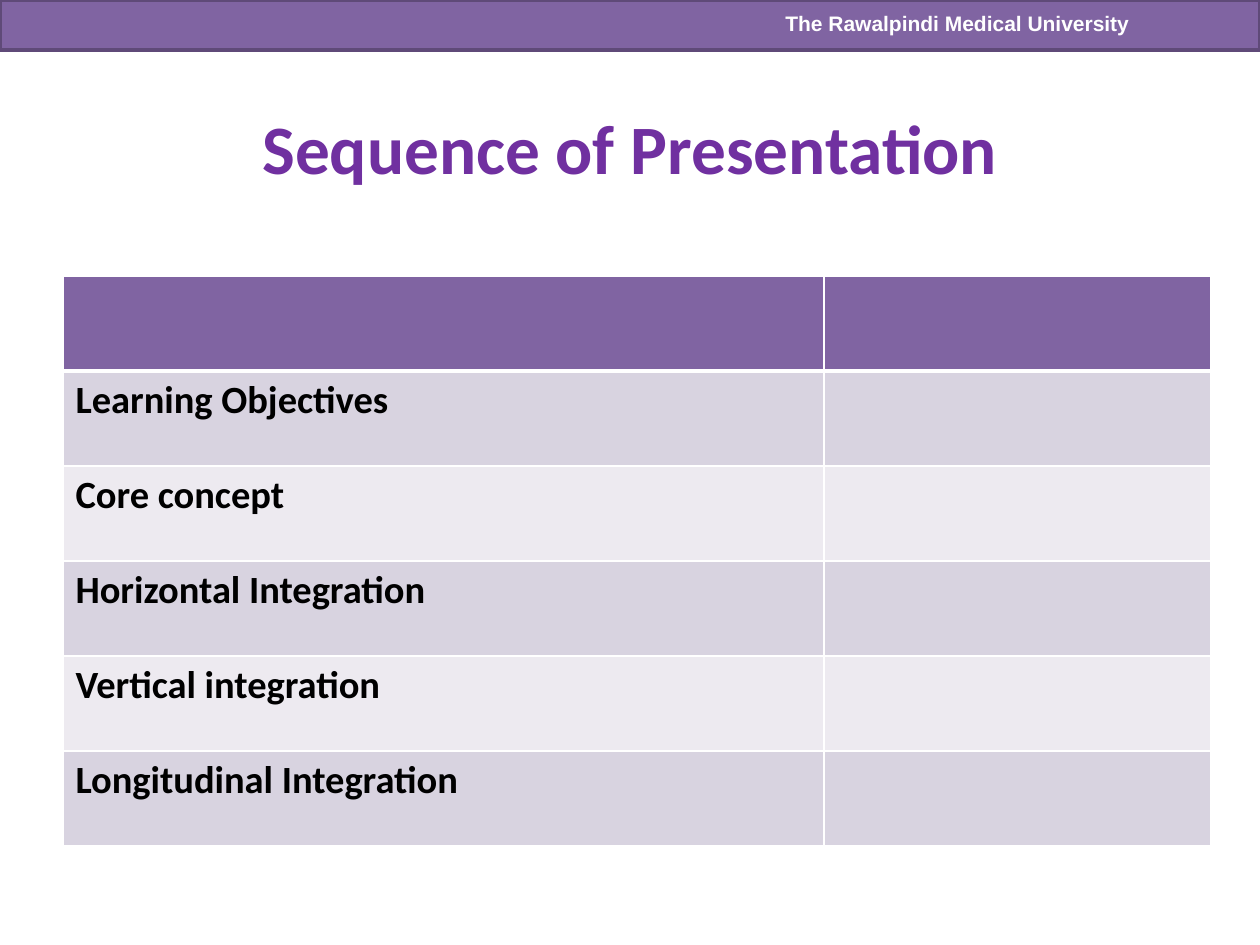
from lxml.etree import SubElement
from pptx import Presentation
from pptx.dml.color import RGBColor
from pptx.enum.shapes import MSO_SHAPE
from pptx.enum.text import MSO_ANCHOR, MSO_AUTO_SIZE, PP_ALIGN
from pptx.oxml.ns import qn
from pptx.util import Emu, Pt

COLORS = {
    "purple": "8064A2",
    "outline": "5F4A78",
    "title": "7030A0",
    "dark_band": "D8D3E0",
    "light_band": "EDEAF0",
    "white": "FFFFFF",
    "black": "000000",
}
FORMATS = {
    "header": {"name": "Arial", "size": Pt(12), "bold": True, "color": "white"},
    "title": {"name": "Calibri", "size": Pt(39.6), "bold": True, "color": "title"},
    "topic": {"name": "Calibri", "size": Pt(22), "bold": True, "color": "black"},
}
TOPICS = [
    "Learning Objectives",
    "Core concept",
    "Horizontal Integration",
    "Vertical integration",
    "Longitudinal Integration",
]
COLUMN_WIDTHS = [761, 387]
ROW_HEIGHT = 95


def px(length):
    return Emu(length * 914400 // 126)


def rgb(color):
    return RGBColor.from_string(COLORS[color])


class SlideBuilder:
    """Holds the text styles and the slide being filled."""

    def __init__(self, page, formats):
        self.page = page
        self.formats = formats

    def add_text(self, frame, text, style, align=PP_ALIGN.LEFT):
        para = frame.paragraphs[0]
        para.alignment = align
        span = para.add_run()
        span.text = text
        for key, value in self.formats[style].items():
            if key == "color":
                span.font.color.rgb = rgb(value)
            else:
                setattr(span.font, key, value)

    def title(self, text, *area):
        box = self.page.shapes.title
        box.left, box.top, box.width, box.height = map(px, area)
        box.text_frame.vertical_anchor = MSO_ANCHOR.MIDDLE
        box.text_frame.auto_size = MSO_AUTO_SIZE.NONE
        self.add_text(box.text_frame, text, "title", PP_ALIGN.CENTER)

    def band(self, *area):
        band = self.page.shapes.add_shape(MSO_SHAPE.RECTANGLE, *map(px, area))
        band.shadow.inherit = False
        band.fill.solid()
        band.fill.fore_color.rgb = rgb("purple")
        band.line.color.rgb = rgb("outline")
        band.line.width = Pt(2)

    def label(self, text, *area):
        box = self.page.shapes.add_textbox(*map(px, area))
        box.text_frame.word_wrap = False
        box.text_frame.auto_size = MSO_AUTO_SIZE.SHAPE_TO_FIT_TEXT
        self.add_text(box.text_frame, text, "header", PP_ALIGN.CENTER)

    def border(self, cell, side, points):
        properties = cell._tc.get_or_add_tcPr()
        line = SubElement(properties, qn(f"a:ln{side}"), w=str(Pt(points)))
        fill = SubElement(line, qn("a:solidFill"))
        SubElement(fill, qn("a:srgbClr"), val=COLORS["white"])

    def table(self, topics, left, top):
        """Draw a blank heading row, then one banded row for each topic."""
        row_count = len(topics) + 1
        table = self.page.shapes.add_table(
            row_count, len(COLUMN_WIDTHS), px(left), px(top),
            px(sum(COLUMN_WIDTHS)), px(ROW_HEIGHT * row_count)).table
        for column, width in zip(table.columns, COLUMN_WIDTHS):
            column.width = px(width)
        for number, row in enumerate(table.rows):
            row.height = px(ROW_HEIGHT)
            color = "dark_band" if number % 2 else "light_band"
            for cell in row.cells:
                for side in "LRTB":
                    heading_edge = (number, side) in [(0, "B"), (1, "T")]
                    self.border(cell, side, 3 if heading_edge else 1)
                cell.fill.solid()
                cell.fill.fore_color.rgb = rgb(color if number else "purple")
            if number:
                first_cell = table.cell(number, 0)
                self.add_text(first_cell.text_frame, topics[number - 1], "topic")


def main():
    deck = Presentation()
    deck.slide_width, deck.slide_height = px(1260), px(945)
    page = deck.slides.add_slide(deck.slide_layouts[5])
    builder = SlideBuilder(page, FORMATS)
    builder.band(0, 0, 1260, 50)
    builder.label("The Rawalpindi Medical University", 771, 4, 373, 38)
    builder.title("Sequence of Presentation", 63, 98, 1134, 97)
    builder.table(TOPICS, 63, 276)
    deck.save("out.pptx")


if __name__ == "__main__":
    main()
